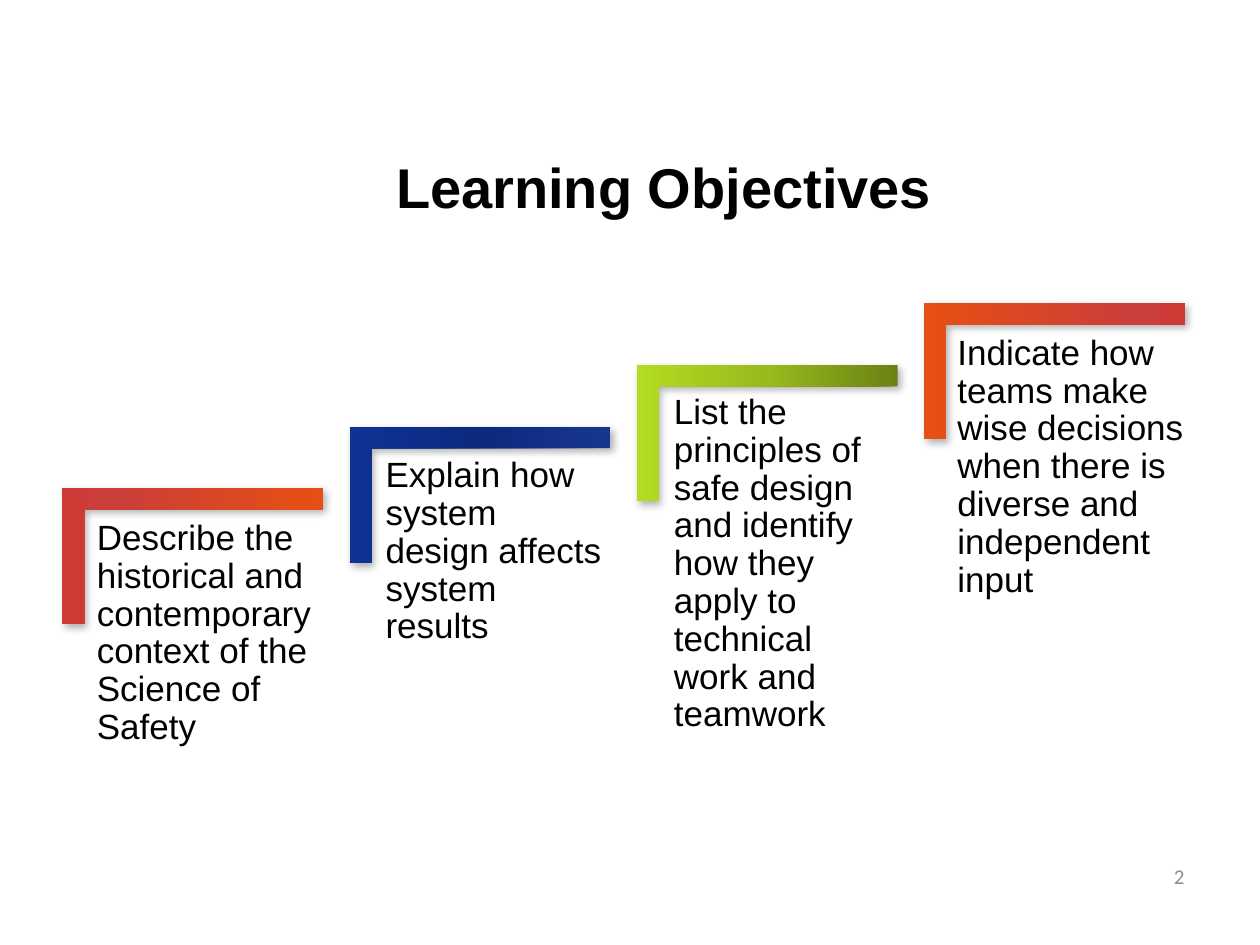
from copy import deepcopy
from lxml import etree
from pptx import Presentation
from pptx.dml.color import RGBColor
from pptx.enum.shapes import MSO_SHAPE
from pptx.enum.text import MSO_ANCHOR, PP_ALIGN
from pptx.oxml.ns import qn
from pptx.util import Inches, Pt

CORNER = MSO_SHAPE.CORNER
MIDDLE, TOP = MSO_ANCHOR.MIDDLE, MSO_ANCHOR.TOP
LEFT, CENTER, RIGHT = PP_ALIGN.LEFT, PP_ALIGN.CENTER, PP_ALIGN.RIGHT

COLORS = {
    "text": "000000", "number": "8C8C8C", "shadow": "000000",
    "orange": "E65014", "red": "CB3E3A", "deep_red": "CE3B37",
    "blue": "17368D", "navy": "0C2A7E", "royal": "0E3296",
    "olive": "6A8214", "green": "97BA1D", "lime": "B3DC22",
}
WARM = [(0, "orange"), (0.8, "red"), (1, "deep_red")]
COOL = [(0, "blue"), (0.5, "navy"), (1, "royal")]
FRESH = [(0, "olive"), (0.5, "green"), (1, "lime")]

TITLE = "Learning Objectives"
STEPS = [
    ("Describe the historical and contemporary context of the Science of Safety",
     (0.67, 4.08, 1.9, 1.92), 0.1, WARM, 270),
    ("Explain how system design affects system results",
     (2.99, 3.56, 1.86, 1.42), 0.07, COOL, 270),
    ("List the principles of safe design and identify how they apply to "
     "technical work and teamwork",
     (5.25, 3.08, 1.75, 2.83), 0.1, FRESH, 270),
    ("Indicate how teams make wise decisions when there is diverse and "
     "independent input",
     (7.5, 2.61, 2.08, 2.22), 0.1, WARM, 90),
]
FIRST_X, FIRST_Y = 0.99, 3.38
STEP_X, STEP_Y = 2.28, -0.49
BRACKET_W, BRACKET_H, THICKNESS = 1.08, 2.07, 0.16


def rgb(name):
    return RGBColor.from_string(COLORS[name])


def add_text(s, text, box, size, font="Arial", color="text", bold=False,
             align=LEFT, anchor=TOP, inset=0.1, spacing=1.0):
    tf = s.shapes.add_textbox(*map(Inches, box)).text_frame
    tf.word_wrap = True
    tf.vertical_anchor = anchor
    tf.margin_left = tf.margin_right = Inches(inset)
    tf.margin_top = tf.margin_bottom = Inches(min(inset, 0.07) if inset < 0.1 else 0.05)
    p = tf.paragraphs[0]
    p.text = text
    p.alignment = align
    p.line_spacing = spacing
    p.font.name, p.font.size, p.font.bold = font, Pt(size), bold
    p.font.color.rgb = rgb(color)


def add_shadow(sp):
    sp.shadow.inherit = False
    effects = sp._element.spPr.find(qn("a:effectLst"))
    shadow = etree.SubElement(effects, qn("a:outerShdw"), blurRad=str(Pt(4.5)),
                              dist=str(Pt(2.6)), dir=str(53 * 60000),
                              rotWithShape="0")
    color = etree.SubElement(shadow, qn("a:srgbClr"), val=COLORS["shadow"])
    etree.SubElement(color, qn("a:alpha"), val="30000")


def add_bracket(s, i, stops, angle):
    sp = s.shapes.add_shape(CORNER, Inches(FIRST_X + i * STEP_X),
                            Inches(FIRST_Y + i * STEP_Y),
                            Inches(BRACKET_W), Inches(BRACKET_H))
    sp.rotation = 90
    sp.adjustments[0] = sp.adjustments[1] = THICKNESS
    sp.line.fill.background()
    sp.fill.gradient()
    sp.fill.gradient_angle = angle
    gs_list = sp._element.spPr.find(qn("a:gradFill")).find(qn("a:gsLst"))
    gs_list.append(deepcopy(gs_list[0]))
    for stop, (position, color) in zip(sp.fill.gradient_stops, stops):
        stop.position = position
        stop.color.rgb = rgb(color)
    add_shadow(sp)


prs = Presentation()
prs.slide_width, prs.slide_height = Inches(10), Inches(7.5)
s = prs.slides.add_slide(prs.slide_layouts[6])

add_text(s, "2", (7.17, 6.75, 2.33, 0.4), 12, font="Calibri", color="number",
         align=RIGHT, anchor=MIDDLE)
for i, (text, box, inset, stops, angle) in enumerate(STEPS):
    add_bracket(s, i, stops, angle)
    add_text(s, text, box, 20, inset=inset, spacing=0.9)
add_text(s, TITLE, (1.02, 0.67, 8.5, 1.61), 32, bold=True, align=CENTER,
         anchor=MIDDLE)

prs.save("out.pptx")
